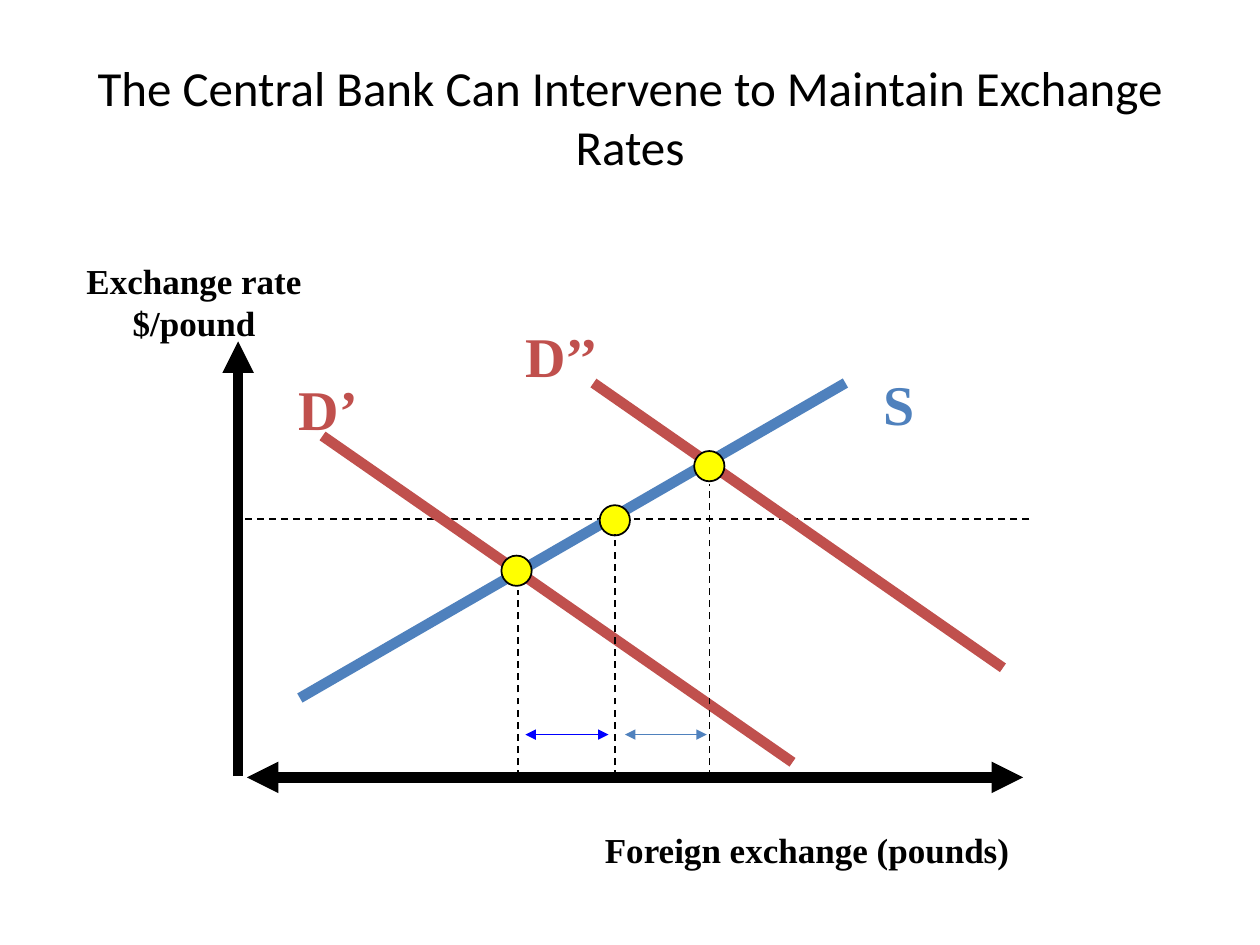
from lxml import etree
from pptx import Presentation
from pptx.dml.color import RGBColor
from pptx.enum import dml, shapes, text
from pptx.oxml import ns
from pptx.util import Inches, Pt

BLACK = RGBColor(0x00, 0x00, 0x00)
SUPPLY_BLUE = RGBColor(0x4F, 0x81, 0xBD)
DEMAND_RED = RGBColor(0xC0, 0x50, 0x4D)
YELLOW = RGBColor(0xFF, 0xFF, 0x00)
PURE_BLUE = RGBColor(0x00, 0x00, 0xFF)

CENTER, RIGHT = text.PP_ALIGN.CENTER, text.PP_ALIGN.RIGHT
SERIF = "Times New Roman"

deck = Presentation()
deck.slide_width, deck.slide_height = Inches(10), Inches(7.5)
page = deck.slides.add_slide(deck.slide_layouts[6])


def add_line(start, end, color, width, dashed=False, arrows=()):
    line = page.shapes.add_connector(
        shapes.MSO_CONNECTOR.STRAIGHT, *[Inches(v) for v in (*start, *end)])
    line.line.color.rgb = color
    line.line.width = Pt(width)
    if dashed:
        line.line.dash_style = dml.MSO_LINE.DASH
    outline = line.line._get_or_add_ln()
    for arrow in arrows:
        etree.SubElement(outline, ns.qn("a:" + arrow), type="triangle")
    etree.SubElement(line._element.spPr, ns.qn("a:effectLst"))


def add_text(place, lines, size, color, align, font=SERIF, bold=True):
    box = page.shapes.add_textbox(*[Inches(v) for v in place])
    frame = box.text_frame
    frame.word_wrap = False
    frame.auto_size = text.MSO_AUTO_SIZE.SHAPE_TO_FIT_TEXT
    for i, words in enumerate(lines):
        para = frame.add_paragraph() if i else frame.paragraphs[0]
        para.alignment = align
        span = para.add_run()
        span.text = words
        span.font.name, span.font.size, span.font.bold = font, Pt(size), bold
        span.font.color.rgb = color
    return frame


# Title
title = add_text((0.5, 0.3, 9, 1.25),
                 ["The Central Bank Can Intervene to Maintain Exchange Rates"],
                 28, BLACK, CENTER, "Calibri", False)
title.auto_size = text.MSO_AUTO_SIZE.NONE
title.word_wrap = True
title.vertical_anchor = text.MSO_ANCHOR.MIDDLE

# Axes, their captions and the fixed exchange rate
axis_y, rate_y = 6.17, 4.12
both_ends = ("headEnd", "tailEnd")
add_line((1.96, axis_y), (8.12, axis_y), BLACK, 6, arrows=both_ends)
add_text((4.69, 6.53, 3.42, 0.44), ["Foreign exchange (pounds)"], 20, BLACK, RIGHT)
add_line((8.17, rate_y), (1.91, rate_y), BLACK, 1, dashed=True)
add_line((1.89, 6.16), (1.89, 2.71), BLACK, 6, arrows=("tailEnd",))
add_text((0.58, 2.01, 1.92, 0.78), ["Exchange rate", "$/pound"], 20, BLACK, CENTER)

# Supply and demand curves with labels
for start, end, color, label, place in [
    ((2.38, 5.54), (6.71, 3.04), SUPPLY_BLUE, "S", (6.9, 2.88, 0.46, 0.64)),
    ((7.96, 5.3), (4.71, 3.04), DEMAND_RED, "D’’", (3.63, 2.5, 1.22, 0.64)),
    ((6.29, 6.05), (2.56, 3.46), DEMAND_RED, "D’", (2.06, 2.92, 0.88, 0.64)),
]:
    add_line(start, end, color, 6)
    add_text(place, [label], 32, color, RIGHT)

# Equilibrium points, each with a drop line to the quantity axis
dot_size = 0.24
for left, top, drop_x, drop_top in [
    (3.98, 4.41, 4.11, 4.68),
    (4.76, 4.01, 4.88, 4.24),
    (5.51, 3.58, 5.63, 3.84),
]:
    dot = page.shapes.add_shape(
        shapes.MSO_SHAPE.OVAL, Inches(left), Inches(top),
        Inches(dot_size), Inches(dot_size))
    dot.shadow.inherit = False
    dot.fill.solid()
    dot.fill.fore_color.rgb = YELLOW
    dot.line.color.rgb = BLACK
    dot.line.width = Pt(1)
    add_line((drop_x, axis_y), (drop_x, drop_top), BLACK, 1, dashed=True)

# Intervention amounts between the quantities
gap_y = 5.83
for left, right, color in [(4.17, 4.83, PURE_BLUE), (4.96, 5.61, SUPPLY_BLUE)]:
    add_line((left, gap_y), (right, gap_y), color, 1, arrows=both_ends)

deck.save("out.pptx")
